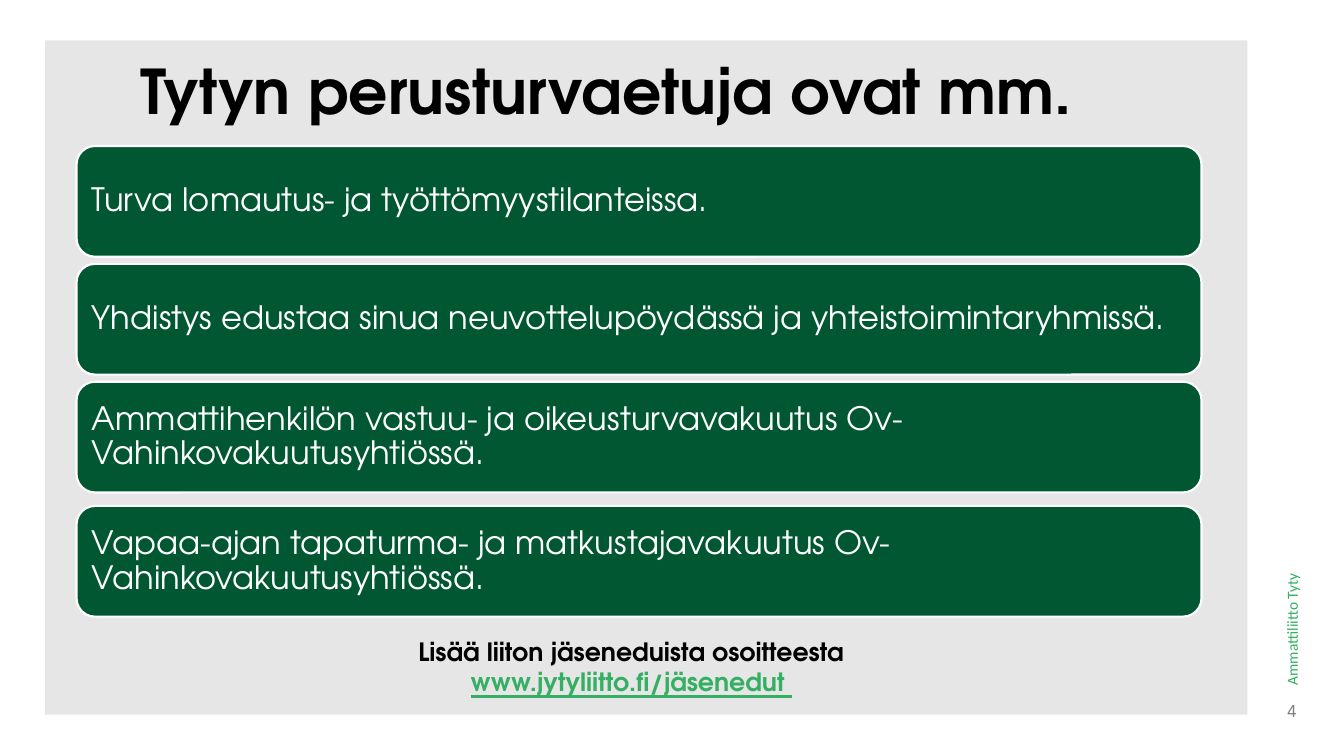
from dataclasses import dataclass

from pptx import Presentation
from pptx.dml.color import RGBColor
from pptx.enum.shapes import MSO_SHAPE
from pptx.enum.text import MSO_ANCHOR, MSO_AUTO_SIZE, PP_ALIGN
from pptx.util import Cm, Pt

RECT, ROUND = MSO_SHAPE.RECTANGLE, MSO_SHAPE.ROUNDED_RECTANGLE
MIDDLE, TOP = MSO_ANCHOR.MIDDLE, MSO_ANCHOR.TOP
LEFT, CENTER = PP_ALIGN.LEFT, PP_ALIGN.CENTER
FIXED = MSO_AUTO_SIZE.NONE


@dataclass(frozen=True)
class Theme:
    main: str = "TeX Gyre Adventor"
    side: str = "Calibri"
    mono: str = "Noto Sans Mono"
    black: RGBColor = RGBColor(0x00, 0x00, 0x00)
    white: RGBColor = RGBColor(0xFF, 0xFF, 0xFF)
    panel: RGBColor = RGBColor(0xE7, 0xE6, 0xE6)
    dark: RGBColor = RGBColor(0x00, 0x57, 0x32)
    green: RGBColor = RGBColor(0x34, 0xAF, 0x63)
    gray: RGBColor = RGBColor(0x80, 0x80, 0x80)
    head: Pt = Pt(44)
    item: Pt = Pt(23)
    note: Pt = Pt(18)
    page: Pt = Pt(12)
    brand: Pt = Pt(11)


THEME = Theme()
ITEMS = [
    "Turva lomautus- ja työttömyystilanteissa.",
    "Yhdistys edustaa sinua neuvottelupöydässä ja yhteistoimintaryhmissä.",
    "Ammattihenkilön vastuu- ja oikeusturvavakuutus Ov-Vahinkovakuutusyhtiössä.",
    "Vapaa-ajan tapaturma- ja matkustajavakuutus Ov-Vahinkovakuutusyhtiössä.",
]


def style(para, face, size, color, align=LEFT, bold=False):
    para.alignment = align
    font = para.font
    font.name, font.size, font.bold = face, size, bold
    font.color.rgb = color


def set_frame(shape, anchor, pad_x, pad_y):
    frame = shape.text_frame
    frame.word_wrap = True
    frame.auto_size = FIXED
    frame.vertical_anchor = anchor
    frame.margin_left = frame.margin_right = Cm(pad_x)
    frame.margin_top = frame.margin_bottom = Cm(pad_y)
    return frame.paragraphs[0]


def add_block(slide, kind, box, color):
    shape = slide.shapes.add_shape(kind, *map(Cm, box))
    shape.shadow.inherit = False
    shape.fill.solid()
    shape.fill.fore_color.rgb = color
    shape.line.fill.background()
    return shape


def add_title(slide, box, text):
    title = slide.shapes.title
    title.left, title.top, title.width, title.height = map(Cm, box)
    para = set_frame(title, MIDDLE, 0.25, 0.13)
    para.text = text
    para.line_spacing = 0.9
    style(para, THEME.main, THEME.head, THEME.black, bold=True)


def add_list(slide, box, items):
    x, y, w, h = box
    tall, extra = 2.79, 0.16
    step = (h - tall - extra) / (len(items) - 1)
    for i, text in enumerate(items):
        # The last bar stands slightly apart
        top = y + i * step + (extra if i == len(items) - 1 else 0)
        bar = add_block(slide, ROUND, (x, top, w, tall), THEME.dark)
        bar.line.color.rgb = THEME.white
        bar.line.width = Pt(1.5)
        para = set_frame(bar, MIDDLE, 0.25, 0.25)
        para.text = text
        para.line_spacing = 0.9
        style(para, THEME.main, THEME.item, THEME.white)


def add_note(slide, box, text, link):
    note = slide.shapes.add_textbox(*map(Cm, box))
    para = set_frame(note, TOP, 0.25, 0.13)
    para.add_run().text = text
    para.add_line_break()
    run = para.add_run()
    run.text = link
    run.font.underline = True
    run.font.color.rgb = THEME.green
    style(para, THEME.main, THEME.note, THEME.black, CENTER, True)


def add_margin(slide, box, brand, page):
    x, y, w, h = box
    # Brand line, turned to read upwards and centred in the margin
    long, thin = 3.78, 0.48
    mid = y + long / 2
    label = slide.shapes.add_textbox(
        Cm(x + (w - long) / 2), Cm(mid - thin / 2), Cm(long), Cm(thin))
    label.rotation = 270
    para = set_frame(label, TOP, 0, 0)
    para.text = brand
    style(para, THEME.side, THEME.brand, THEME.green)
    # Page number at the foot
    tall = 1.02
    number = slide.shapes.add_textbox(Cm(x), Cm(y + h - tall), Cm(w), Cm(tall))
    para = set_frame(number, MIDDLE, 0, 0)
    para.text = page
    para.space_after = Pt(6)
    style(para, THEME.mono, THEME.page, THEME.gray, CENTER)


def build_slide(deck):
    slide = deck.slides.add_slide(deck.slide_layouts[5])
    panel = add_block(slide, RECT, (1.14, 1.02, 30.3, 16.99), THEME.panel)
    # Panel goes behind the title
    slide.shapes.title.element.addprevious(panel.element)
    add_title(slide, (3.3, 0.53, 27.25, 3.71), "Tytyn perusturvaetuja ovat mm.")
    add_list(slide, (1.93, 3.68, 28.35, 11.86), ITEMS)
    add_note(slide, (8.1, 15.9, 15.62, 2.57),
             "Lisää liiton jäseneduista osoitteesta",
             "www.jytyliitto.fi/jäsenedut ")
    add_margin(slide, (32.18, 13.49, 0.76, 4.93), "Ammattiliitto Tyty", "4")


def main():
    deck = Presentation()
    deck.slide_width, deck.slide_height = Cm(33.87), Cm(19.05)
    build_slide(deck)
    deck.save("out.pptx")


if __name__ == "__main__":
    main()
